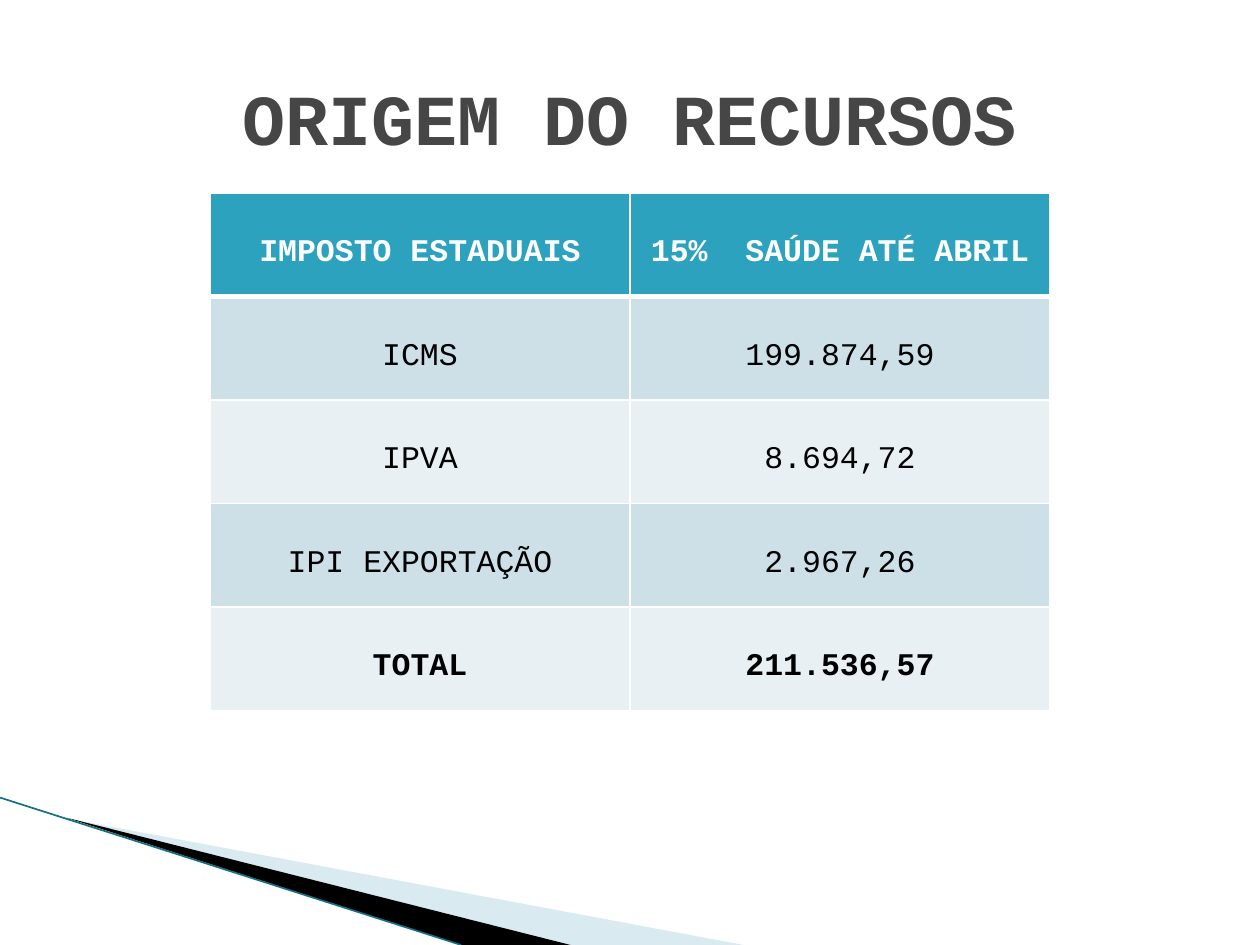
"""Build the slide on the origin of the funds: a title, a tax table and a corner sweep."""
from lxml import etree
from pptx import Presentation, util as u
from pptx.dml.color import RGBColor
from pptx.enum import shapes, text
from pptx.oxml import ns

TITLE = "ORIGEM DO RECURSOS"
ROWS = [
    ("IMPOSTO ESTADUAIS", "15%  SAÚDE ATÉ ABRIL"),
    ("ICMS", "199.874,59"),
    ("IPVA", "8.694,72"),
    ("IPI EXPORTAÇÃO", "2.967,26"),
    ("TOTAL", "211.536,57"),
]
THEME = {
    "font": "Courier New", "title": 41, "body": 18,
    "ink": "464646", "head": "2DA2BF", "bands": ("E8F0F4", "CDE0E8"),
    "light": "FFFFFF", "dark": "000000", "pale": "A0CBDC", "edge": "147085",
    "rule": 1, "thick": 3, "stroke": 0.95,
}
WIDE, HIGH = 10, 7.5
WEDGES = [
    ([(0.55, 6.5), (5.9, HIGH), (4.53, HIGH)], "pale", 40),
    ([(0.53, 6.49), (4.53, HIGH), (3.66, HIGH)], "dark", 100),
]
EDGE = [(0, 6.33), (3.66, HIGH)]


def tint(name):
    return RGBColor.from_string(THEME.get(name, name))


def sub(root, tag, **attrs):
    return etree.SubElement(root, ns.qn(tag), **attrs)


def write(frame, words, size, color, bold):
    para = frame.paragraphs[0]
    para.alignment = text.PP_ALIGN.CENTER
    run = para.add_run()
    run.text = words
    font = run.font
    font.name, font.size, font.bold = THEME["font"], u.Pt(THEME[size]), bold
    font.color.rgb = tint(color)


def wedge(slide, points, color, alpha):
    spots = [(u.Inches(x), u.Inches(y)) for x, y in points]
    pen = slide.shapes.build_freeform(*spots[0])
    pen.add_line_segments(spots[1:], close=True)
    shape = pen.convert_to_shape()
    shape.shadow.inherit = False
    shape.fill.solid()
    shape.fill.fore_color.rgb = tint(color)
    shape.line.fill.background()
    if alpha < 100:
        node = shape.fill._xPr.find(".//" + ns.qn("a:srgbClr"))
        sub(node, "a:alpha", val=str(alpha * 1000))


def sweep(slide):
    for part in WEDGES:
        wedge(slide, *part)
    ends = [u.Inches(n) for spot in EDGE for n in spot]
    line = slide.shapes.add_connector(shapes.MSO_CONNECTOR.STRAIGHT, *ends)
    line.line.color.rgb = tint("edge")
    line.line.width = u.Pt(THEME["stroke"])
    sub(line._element.spPr, "a:effectLst")


def border(cell, row):
    thick = {"a:lnB": 0, "a:lnT": 1}
    for side in ("a:lnL", "a:lnR", "a:lnT", "a:lnB"):
        size = THEME["thick" if thick.get(side) == row else "rule"]
        line = sub(cell._tc.get_or_add_tcPr(), side, w=str(u.Pt(size)))
        sub(sub(line, "a:solidFill"), "a:srgbClr", val=THEME["light"])


def grid(slide):
    wide, high = WIDE * 2 / 3, 4.11
    box = [u.Inches(n) for n in ((WIDE - wide) / 2, 1.53, wide, high)]
    table = slide.shapes.add_table(len(ROWS), len(ROWS[0]), *box).table
    for r, row in enumerate(ROWS):
        head, last = r == 0, r == len(ROWS) - 1
        for c, words in enumerate(row):
            cell = table.cell(r, c)
            border(cell, r)
            cell.fill.solid()
            cell.fill.fore_color.rgb = tint("head" if head else THEME["bands"][r % 2])
            cell.margin_top = u.Inches(0.34)
            write(cell.text_frame, words, "body", "light" if head else "dark", head or last)


def main():
    deck = Presentation()
    deck.slide_width, deck.slide_height = u.Inches(WIDE), u.Inches(HIGH)
    slide = deck.slides.add_slide(deck.slide_layouts[6])
    sweep(slide)
    box = [u.Inches(n) for n in (WIDE * 0.05, HIGH * 0.04, WIDE * 0.9, 1.25)]
    frame = slide.shapes.add_textbox(*box).text_frame
    frame.word_wrap = True
    frame.vertical_anchor = text.MSO_ANCHOR.MIDDLE
    write(frame, TITLE, "title", "ink", True)
    grid(slide)
    deck.save("out.pptx")


if __name__ == "__main__":
    main()
